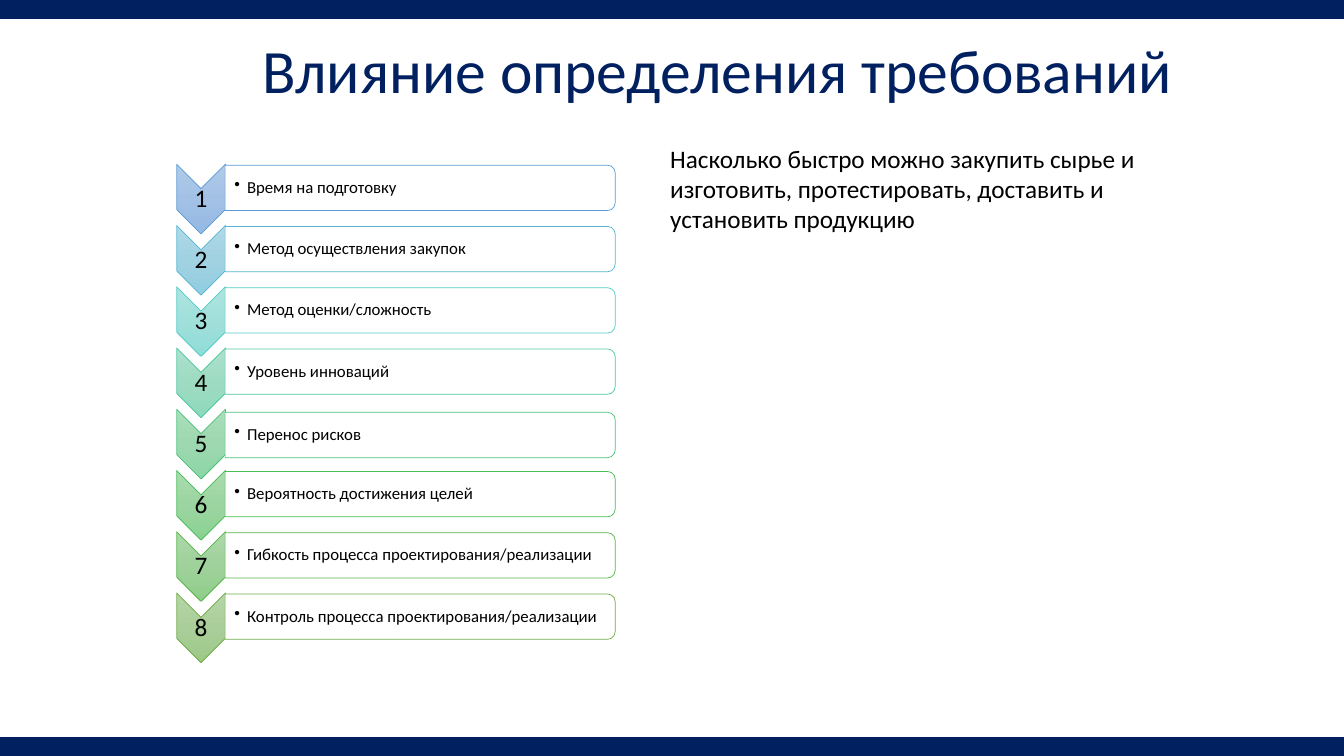
import pptx
import pptx.util
import pptx.dml.color
import pptx.enum.shapes
import pptx.enum.text
import pptx.oxml
import pptx.oxml.ns
import copy

Pt = pptx.util.Pt
SHAPE = pptx.enum.shapes.MSO_SHAPE
ALIGN = pptx.enum.text.PP_ALIGN
ANCHOR = pptx.enum.text.MSO_ANCHOR
qn = pptx.oxml.ns.qn

COLORS = {"navy": "002060", "white": "FFFFFF", "black": "000000"}
W, H = 960, 540
TOP, PITCH = 142.2, 43.75

FACTORS = [
    ("Время на подготовку", "5B9BD5", ("B1CBE9", "A3C1E5", "93B9E4")),
    ("Метод осуществления закупок", "57B7D1", ("AFD9E7", "A1D2E2", "90CDE1")),
    ("Метод оценки/сложность", "53CCC5", ("ADE4E0", "A0DFDA", "8EDDD8")),
    ("Уровень инноваций", "4FC7A0", ("ACE1CC", "9EDBC3", "8DDABC")),
    ("Перенос рисков", "4CC27B", ("AADEBB", "9DD8B0", "8BD6A4")),
    ("Вероятность достижения целей", "48BD58", ("A9DBAE", "9CD5A1", "89D290")),
    ("Гибкость процесса проектирования/реализации", "55B646", ("ACD8A8", "9FD19B", "8FCE88")),
    ("Контроль процесса проектирования/реализации", "70AD47", ("B5D5A7", "AACE9A", "9CC987")),
]
BAR_SHIFT = {4: 1.5}


def rgb(value):
    return pptx.dml.color.RGBColor.from_string(value)


def set_attrs(obj, attrs):
    for name, value in attrs.items():
        setattr(obj, name, value)


def add_block(s, kind, box, fill, line, width, rotation=0):
    sp = s.shapes.add_shape(kind, *map(Pt, box))
    sp.shadow.inherit = False
    sp.rotation = rotation
    sp.fill.solid()
    sp.fill.fore_color.rgb = rgb(fill)
    sp.line.color.rgb = rgb(line)
    sp.line.width = Pt(width)
    return sp


def add_text(s, box, text, size, color, frame={}, para={}, bullet=False):
    sp = s.shapes.add_textbox(*map(Pt, box))
    tf = sp.text_frame
    set_attrs(tf, {"word_wrap": True, **frame})
    p = tf.paragraphs[0]
    if bullet:
        pPr = p._p.get_or_add_pPr()
        pPr.set("marL", str(Pt(9)))
        pPr.set("indent", str(-Pt(9)))
        pPr.append(pptx.oxml.parse_xml(
            '<a:buChar xmlns:a="http://schemas.openxmlformats.org/drawingml/2006/main" char="•"/>'))
    set_attrs(p, para)
    r = p.add_run()
    r.text = text
    set_attrs(r.font, {"name": "Calibri", "size": Pt(size)})
    r.font.color.rgb = rgb(color)
    return sp


def set_gradient(sp, stops):
    sp.fill.gradient()
    grad = sp._element.spPr.find(qn("a:gradFill"))
    grad.set("rotWithShape", "0")
    gs_list = grad.find(qn("a:gsLst"))
    gs_list.insert(1, copy.deepcopy(gs_list[0]))
    grad.find(qn("a:lin")).set("ang", "5400000")
    for stop, position, color in zip(sp.fill.gradient_stops, (0, 0.5, 1), stops):
        stop.position = position
        stop.color.rgb = rgb(color)


def add_factor(s, i, text, line, stops):
    mid = TOP + i * PITCH
    bar_mid = mid - 8 + BAR_SHIFT.get(i, 0)
    tight = {"vertical_anchor": ANCHOR.MIDDLE, "margin_left": Pt(1), "margin_right": Pt(1),
             "margin_top": Pt(1), "margin_bottom": Pt(1)}

    chevron = add_block(s, SHAPE.CHEVRON, (118.7, mid - 17.4, 49.8, 34.8),
                        COLORS["white"], line, 0.5, 90)
    set_gradient(chevron, stops)
    add_text(s, (126.2, mid - 7.5, 34.8, 15), str(i + 1), 18, COLORS["black"],
             tight, {"alignment": ALIGN.CENTER, "line_spacing": 0.9})
    add_block(s, SHAPE.ROUND_2_SAME_RECTANGLE, (283.9, bar_mid - 139.3, 32.4, 278.6),
              COLORS["white"], line, 0.5, 90)
    add_text(s, (160.8, bar_mid - 14.6, 277, 29.2), text, 12, COLORS["black"],
             {**tight, "margin_left": Pt(6.7)}, {"line_spacing": 0.9}, bullet=True)


def main():
    prs = pptx.Presentation()
    set_attrs(prs, {"slide_width": Pt(W), "slide_height": Pt(H)})
    s = prs.slides.add_slide(prs.slide_layouts[6])
    for top in (H - 13.2, 0):
        add_block(s, SHAPE.RECTANGLE, (0, top, W, 13.2), COLORS["navy"], COLORS["navy"], 1)
    add_text(s, (139.7, 0, 746, 104.4), "Влияние определения требований", 44, COLORS["navy"],
             {"vertical_anchor": ANCHOR.MIDDLE},
             {"alignment": ALIGN.CENTER, "line_spacing": 0.9})
    for i, factor in enumerate(FACTORS):
        add_factor(s, i, *factor)
    note = add_text(s, (471.6, 98.7, 390.2, 72.7),
                    "Насколько быстро можно закупить сырье и изготовить, протестировать, "
                    "доставить и установить продукцию", 18, COLORS["black"])
    note.fill.solid()
    note.fill.fore_color.rgb = rgb(COLORS["white"])
    prs.save("out.pptx")


if __name__ == "__main__":
    main()
